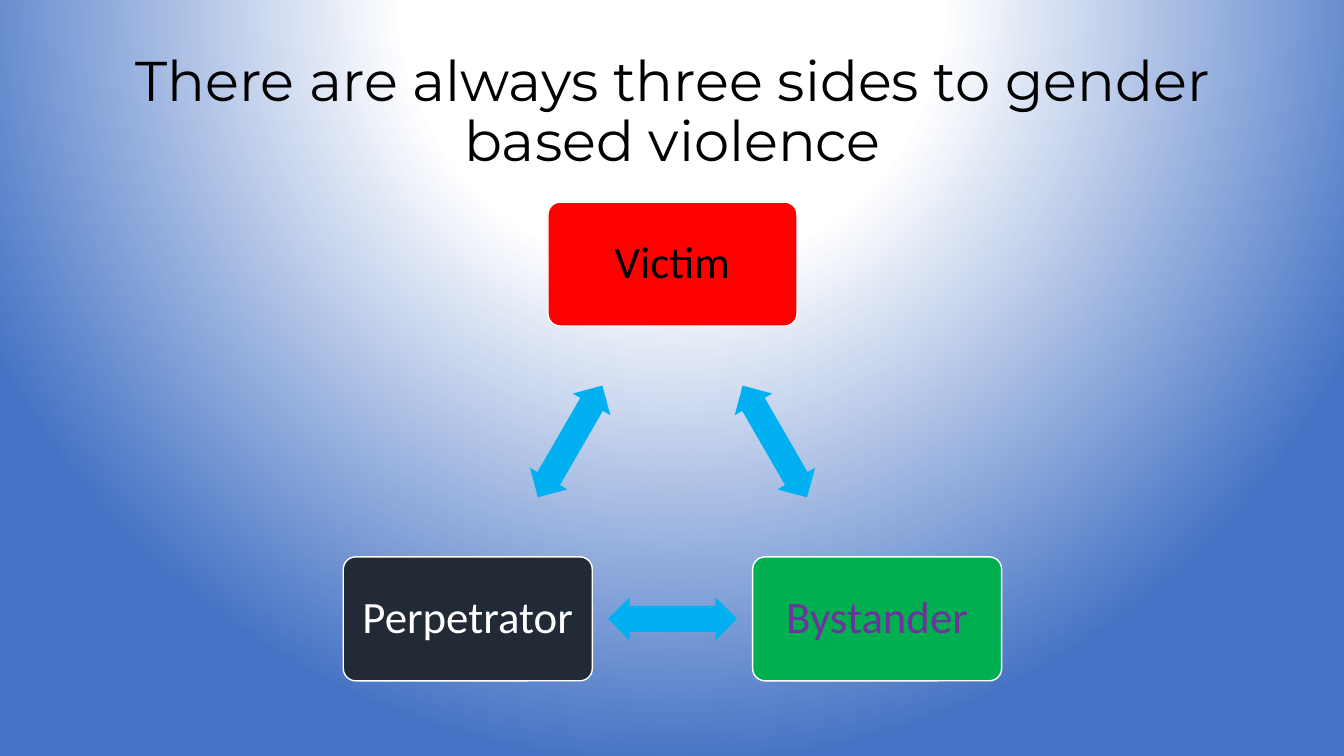
from pptx import Presentation
from pptx.dml.color import RGBColor
from pptx.enum.shapes import MSO_SHAPE
from pptx.enum.text import MSO_ANCHOR, MSO_AUTO_SIZE, PP_ALIGN
from pptx.oxml import parse_xml
from pptx.oxml.ns import nsdecls, qn
from pptx.util import Inches, Pt

BOX, ARROW = MSO_SHAPE.ROUNDED_RECTANGLE, MSO_SHAPE.LEFT_RIGHT_ARROW
MIDDLE, CENTER, NO_FIT = MSO_ANCHOR.MIDDLE, PP_ALIGN.CENTER, MSO_AUTO_SIZE.NONE

COLORS = {
    "white": "FFFFFF", "black": "000000", "blue": "4472C4", "sky": "00B0F0",
    "red": "FF0000", "green": "00B050", "navy": "222A35", "purple": "7030A0",
}
TITLE = "There are always three sides to gender based violence"
TITLE_AT = (0.92, 0.4, 11.5, 1.45)
# label, fill, text colour, centre; clockwise from the top
SIDES = [
    ("Victim", "red", "black", (6.67, 2.62)),
    ("Bystander", "green", "purple", (8.7, 6.14)),
    ("Perpetrator", "navy", "white", (4.64, 6.14)),
]
BOX_SIZE, ARROW_SIZE = (2.47, 1.23), (1.28, 0.43)
INSET = 0.13
GLOW = [(0, "white"), (35, "white"), (100, "blue")]


def rgb(name):
    return RGBColor.from_string(COLORS[name])


def paint_back(slide):
    """Fill the background with a circular gradient centred above the slide."""
    slide.background.fill.solid()
    stops = "".join(
        f'<a:gs pos="{pos * 1000}"><a:srgbClr val="{COLORS[name]}"/></a:gs>'
        for pos, name in GLOW)
    glow = parse_xml(
        f'<a:gradFill {nsdecls("a")} rotWithShape="1"><a:gsLst>{stops}</a:gsLst>'
        '<a:path path="circle"><a:fillToRect l="50000" t="-80000" r="50000" '
        'b="180000"/></a:path></a:gradFill>')
    props = next(slide.element.iter(qn("p:bgPr")))
    props.replace(props[0], glow)


def write(shape, text, font, size, color):
    frame = shape.text_frame
    frame.text = text
    for key, value in {"word_wrap": True, "auto_size": NO_FIT,
                       "vertical_anchor": MIDDLE}.items():
        setattr(frame, key, value)
    para = frame.paragraphs[0]
    para.alignment, para.line_spacing = CENTER, 0.9
    for key, value in {"name": font, "size": Pt(size)}.items():
        setattr(para.font, key, value)
    para.font.color.rgb = rgb(color)
    return frame


def add_shape(slide, kind, center, size, fill, adjust):
    corner = [mid - length / 2 for mid, length in zip(center, size)]
    shape = slide.shapes.add_shape(kind, *map(Inches, (*corner, *size)))
    shape.shadow.inherit = False
    shape.fill.solid()
    shape.fill.fore_color.rgb = rgb(fill)
    shape.line.fill.background()
    for i, value in enumerate(adjust):
        shape.adjustments[i] = value
    return shape


def add_side(slide, label, fill, color, center):
    box = add_shape(slide, BOX, center, BOX_SIZE, fill, [0.1])
    box.line.color.rgb = rgb("white")
    box.line.width = Pt(1)
    frame = write(box, label, "Calibri", 32, color)
    for edge in ("left", "right", "top", "bottom"):
        setattr(frame, f"margin_{edge}", Inches(INSET))


def main():
    deck = Presentation()
    deck.slide_width, deck.slide_height = Inches(13.33), Inches(7.5)
    slide = deck.slides.add_slide(deck.slide_layouts[5])
    paint_back(slide)

    title = slide.shapes.title
    for key, value in zip(("left", "top", "width", "height"), TITLE_AT):
        setattr(title, key, Inches(value))
    write(title, TITLE, "Montserrat", 40, "black")

    for i, side in enumerate(SIDES):
        add_side(slide, *side)
        start, end = side[-1], SIDES[(i + 1) % len(SIDES)][-1]
        middle = [(a + b) / 2 for a, b in zip(start, end)]
        arrow = add_shape(slide, ARROW, middle, ARROW_SIZE, "sky", [0.6, 0.5])
        arrow.rotation = 60 + 120 * i

    deck.save("out.pptx")


if __name__ == "__main__":
    main()
